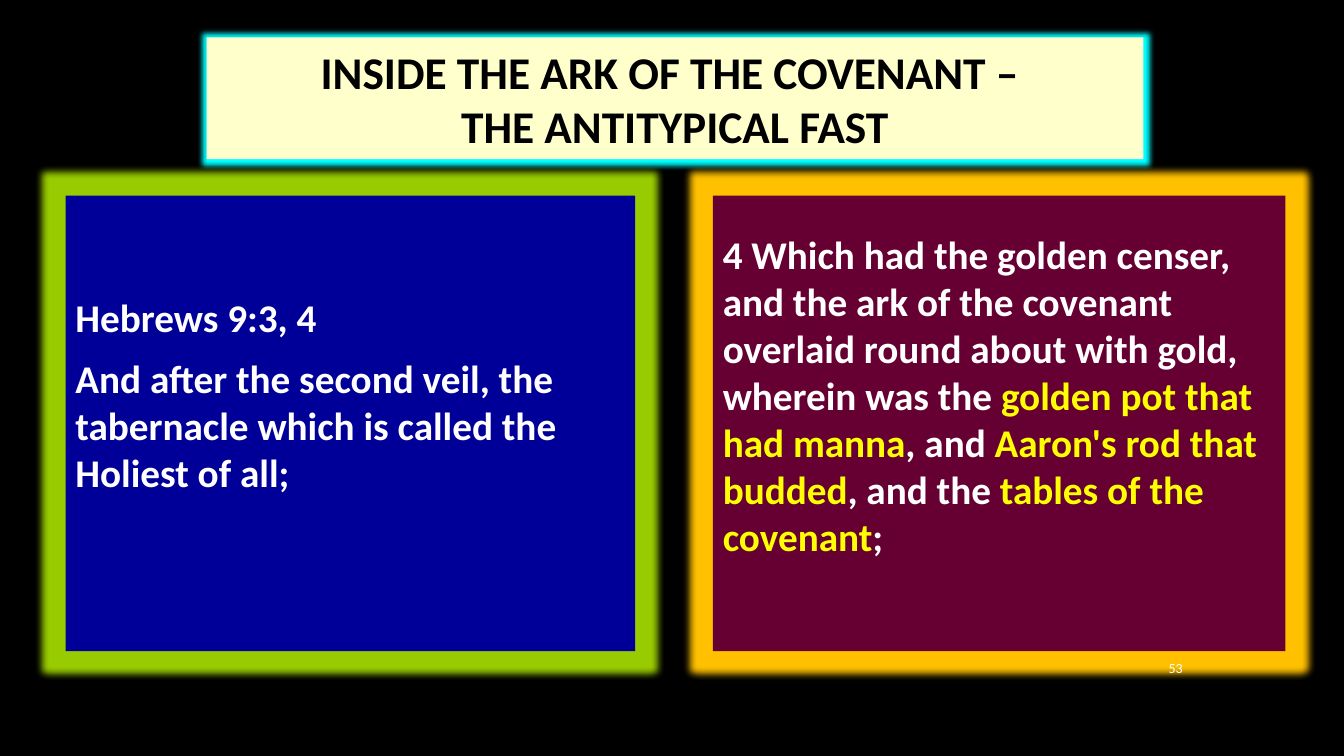
from dataclasses import dataclass

from lxml import etree
from pptx import Presentation
from pptx.dml.color import RGBColor
from pptx.enum.shapes import MSO_SHAPE as Shape
from pptx.enum.text import MSO_ANCHOR as Anchor, MSO_AUTO_SIZE as AutoSize, PP_ALIGN as Align
from pptx.oxml.ns import qn
from pptx.util import Inches, Pt


@dataclass(frozen=True)
class Theme:
    font: str = "Calibri"
    black: str = "000000"
    white: str = "FFFFFF"
    highlight: str = "FFFF00"
    cream: str = "FFFFCC"
    cyan: str = "00FFFF"
    navy: str = "000099"
    green: str = "99CC00"
    maroon: str = "660033"
    gold: str = "FFC000"
    title_size: float = 32.4
    verse_size: float = 28
    number_size: float = 10
    paragraph_gap: float = 10


THEME = Theme()

TITLE_LINES = ["INSIDE THE ARK OF THE COVENANT – ", "THE ANTITYPICAL FAST"]
TITLE_BOX = (2.05, 0.37, 9.29, 1.21)

PANEL_TOP, PANEL_HEIGHT, PANEL_BOTTOM_INSET = 1.94, 4.52, 0.62
PANELS = [
    {
        "left": 0.65, "width": 5.65, "fill": THEME.navy, "glow": THEME.green,
        "paragraphs": [
            ["Hebrews 9:3, 4"],
            ["And after the second veil, the tabernacle which is called the Holiest of all;"],
        ],
    },
    {
        "left": 7.07, "width": 5.68, "fill": THEME.maroon, "glow": THEME.gold,
        "paragraphs": [[
            "4 Which had the golden censer, and the ark of the covenant overlaid "
            "round about with gold, wherein was the ",
            ("golden pot that had manna", THEME.highlight),
            ", and ",
            ("Aaron's rod that budded", THEME.highlight),
            ", and the ",
            ("tables of the covenant", THEME.highlight),
            ";",
        ]],
    },
]

PAGE_NUMBER = "53"
NUMBER_BOX = (11.23, 6.42, 0.6, 0.41)


def place(shape, box):
    shape.left, shape.top, shape.width, shape.height = map(Inches, box)


def paint(shape, fill, glow, radius):
    shape.fill.solid()
    shape.fill.fore_color.rgb = RGBColor.from_string(fill)
    shape.line.fill.background()
    properties = shape._element.spPr
    for effects in properties.findall(qn("a:effectLst")):
        properties.remove(effects)
    effects = etree.SubElement(properties, qn("a:effectLst"))
    halo = etree.SubElement(effects, qn("a:glow"), rad=str(Pt(radius)))
    etree.SubElement(halo, qn("a:srgbClr"), val=glow)


def write(shape, paragraphs, size, color, bold=False, align=Align.LEFT, bottom=0.05):
    frame = shape.text_frame
    frame.word_wrap = True
    frame.auto_size = AutoSize.NONE
    frame.vertical_anchor = Anchor.MIDDLE
    frame.margin_left = frame.margin_right = Inches(0.1)
    frame.margin_top, frame.margin_bottom = Inches(0.05), Inches(bottom)
    for index, pieces in enumerate(paragraphs):
        paragraph = frame.add_paragraph() if index else frame.paragraphs[0]
        paragraph.alignment = align
        paragraph.line_spacing = 1.0
        paragraph.space_before = Pt(0)
        last = index == len(paragraphs) - 1
        paragraph.space_after = Pt(0 if last else THEME.paragraph_gap)
        for piece in pieces:
            if piece == "\n":
                paragraph.add_line_break()
                continue
            text, tint = (piece, color) if isinstance(piece, str) else piece
            run = paragraph.add_run()
            run.text = text
            run.font.name = THEME.font
            run.font.size = Pt(size)
            run.font.bold = bold
            run.font.color.rgb = RGBColor.from_string(tint)


def main():
    presentation = Presentation()
    presentation.slide_width, presentation.slide_height = Inches(13.33), Inches(7.5)
    slide = presentation.slides.add_slide(presentation.slide_layouts[5])
    slide.background.fill.solid()
    slide.background.fill.fore_color.rgb = RGBColor.from_string(THEME.black)

    title = slide.shapes.title
    place(title, TITLE_BOX)
    paint(title, THEME.cream, THEME.cyan, 8)
    first, second = TITLE_LINES
    write(title, [[first, "\n", second]], THEME.title_size, THEME.black,
          bold=True, align=Align.CENTER)

    for panel in PANELS:
        box = (panel["left"], PANEL_TOP, panel["width"], PANEL_HEIGHT)
        shape = slide.shapes.add_shape(Shape.RECTANGLE, *map(Inches, box))
        paint(shape, panel["fill"], panel["glow"], 11)
        write(shape, panel["paragraphs"], THEME.verse_size, THEME.white,
              bold=True, bottom=PANEL_BOTTOM_INSET)

    number = slide.shapes.add_textbox(*map(Inches, NUMBER_BOX))
    write(number, [[PAGE_NUMBER]], THEME.number_size, THEME.white, align=Align.RIGHT)

    presentation.save("out.pptx")


if __name__ == "__main__":
    main()
